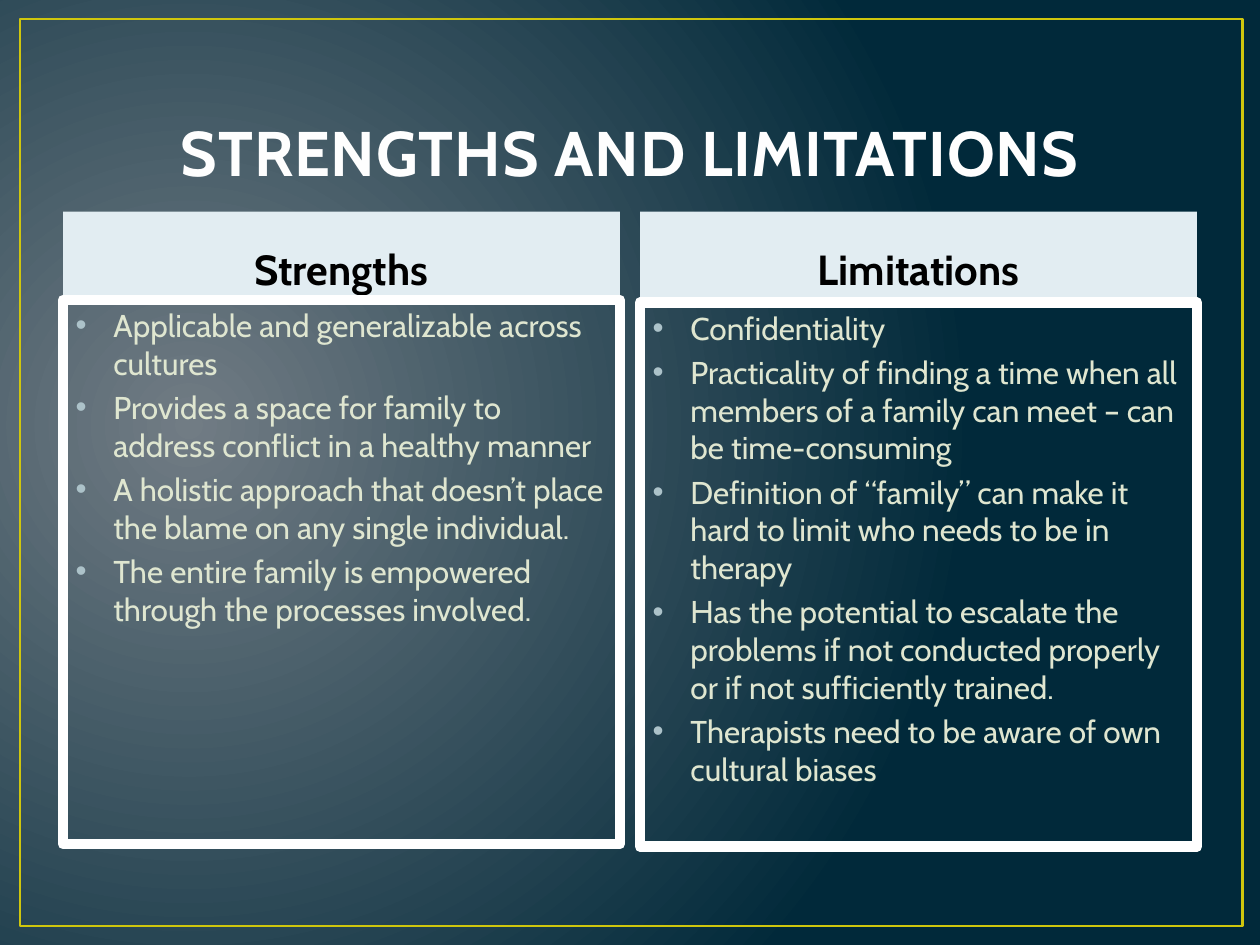
from lxml import etree
from pptx import Presentation
from pptx.dml.color import RGBColor
from pptx.enum.shapes import MSO_SHAPE
from pptx.enum.text import MSO_ANCHOR, MSO_AUTO_SIZE, PP_ALIGN
from pptx.oxml import parse_xml
from pptx.oxml.ns import nsdecls, qn
from pptx.util import Inches, Pt


def color(value):
    return RGBColor.from_string(value)


def write(sp, box, lines, size, ink, bold=False, anchor=MSO_ANCHOR.TOP, align=None):
    """Place a placeholder and fill it with formatted paragraphs."""
    sp.left, sp.top, sp.width, sp.height = map(Inches, box)
    tf = sp.text_frame
    tf.text = "\n".join(lines)
    tf.word_wrap = True
    tf.auto_size = MSO_AUTO_SIZE.NONE
    tf.vertical_anchor = anchor
    for p in tf.paragraphs:
        p.alignment = align
        font = p.runs[0].font
        font.name, font.size, font.bold = "Cabin", Pt(size), bold
        font.color.rgb = color(ink)
    return tf


prs = Presentation()
prs.slide_width, prs.slide_height = Inches(10), Inches(7.5)
s = prs.slides.add_slide(prs.slide_layouts.get_by_name("Comparison"))

# Background: circular gradient glowing from the left
fill = s.background.fill
fill.gradient()
for stop, (position, tone) in zip(fill.gradient_stops, [(0, "717C84"), (1, "01293A")]):
    stop.position = position
    stop.color.rgb = color(tone)
lin = s.element.find(".//" + qn("a:lin"))
lin.getparent().replace(lin, parse_xml(
    f'<a:path {nsdecls("a")} path="circle">'
    '<a:fillToRect l="15000" t="50000" r="85000" b="60000"/></a:path>'))

# Thin frame around the slide, behind the text
frame = s.shapes.add_shape(MSO_SHAPE.RECTANGLE, *map(Inches, (0.16, 0.15, 9.7, 7.2)))
frame.shadow.inherit = False
frame.fill.background()
frame.line.color.rgb = color("CFC60D")
frame.line.width = Pt(1.5)
s.shapes.title.element.addprevious(frame.element)

# Title
margin, gap = 0.5, 0.16
col_w = (10 - 2 * margin - gap) / 2
tf = write(s.shapes.title, (margin, 0.3, 9, 1.25), ["STRENGTHS AND LIMITATIONS"],
           36, "FEFEFE", True, MSO_ANCHOR.BOTTOM, PP_ALIGN.CENTER)
tf.paragraphs[0].runs[0].font._element.set("spc", "50")

# Two columns: heading band above an outlined list
columns = [
    ("Strengths", 2.38, [
        "Applicable and generalizable across cultures",
        "Provides a space for family to address conflict in a healthy manner",
        "A holistic approach that doesn’t place the blame on any single individual.",
        "The entire family is empowered through the processes involved.",
    ]),
    ("Limitations", 2.4, [
        "Confidentiality",
        "Practicality of finding a time when all members of a family can meet – can be time-consuming",
        "Definition of “family” can make it hard to limit who needs to be in therapy",
        "Has the potential to escalate the problems if not conducted properly or if not sufficiently trained.",
        "Therapists need to be aware of own cultural biases",
    ]),
]
for i, (heading, list_top, points) in enumerate(columns):
    left = margin + i * (col_w + gap)
    band, body = [s.placeholders[1 + 2 * i + k] for k in range(2)]

    write(band, (left, 1.68, col_w, 0.7), [heading], 24, "000000", True,
          MSO_ANCHOR.BOTTOM, PP_ALIGN.CENTER)
    band.fill.solid()
    band.fill.fore_color.rgb = color("E2EDF2")

    tf = write(body, (left, list_top, col_w, 4.32), points, 18, "DFE6D0")
    body.line.color.rgb = color("FFFFFF")
    body.line.width = Pt(6)
    for p in tf.paragraphs:
        pPr = p._p.get_or_add_pPr()
        pPr.set("marL", str(Inches(0.3)))
        pPr.set("indent", str(-Inches(0.3)))
        bullet = etree.SubElement(pPr, qn("a:buClr"))
        etree.SubElement(bullet, qn("a:srgbClr"), val="ACC2C9")

prs.save("out.pptx")
